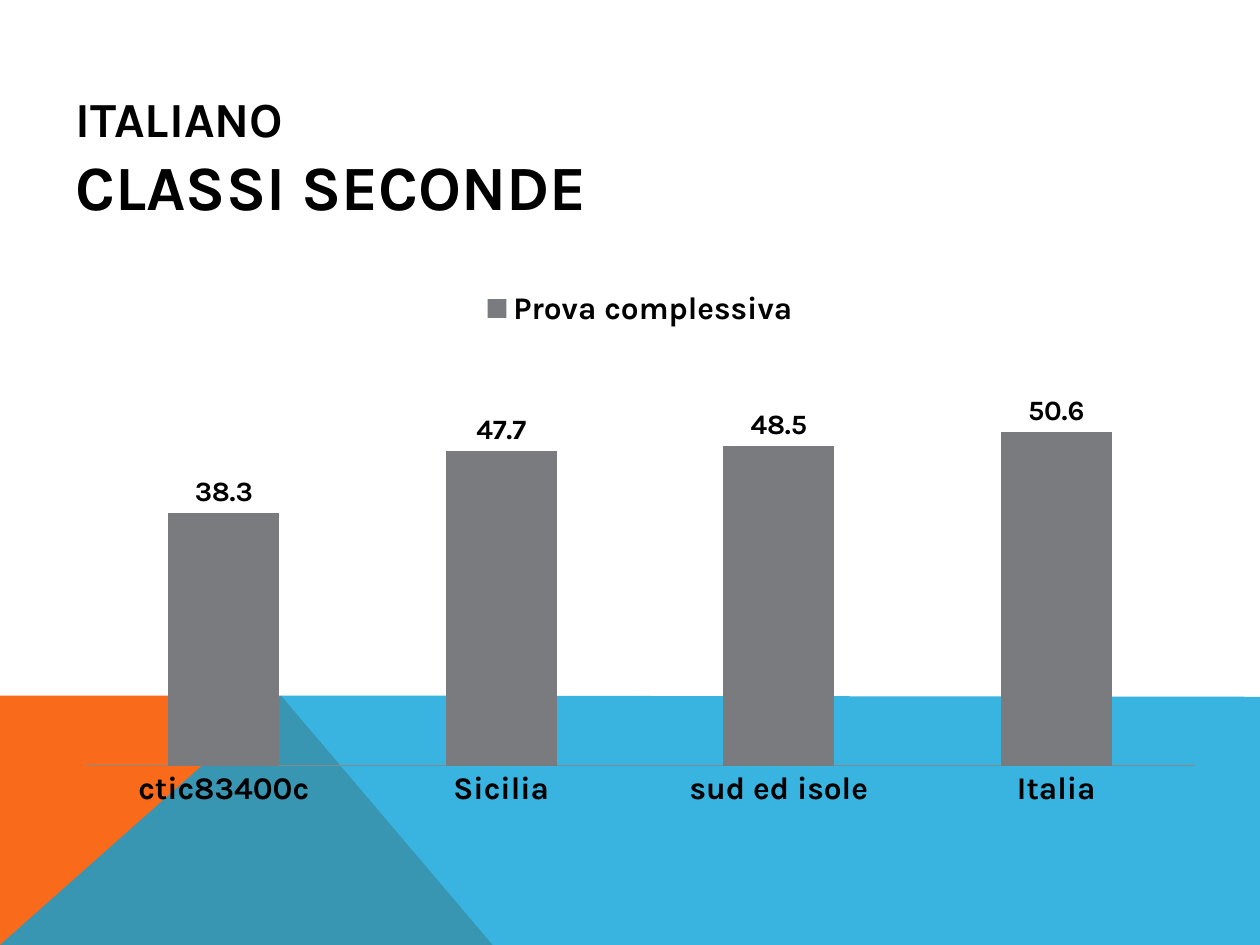
"""Build the slide with the Italian test results of the second classes."""
from lxml.etree import SubElement
from pptx import Presentation
from pptx.chart.data import CategoryChartData
from pptx.dml.color import RGBColor
from pptx.enum.chart import (XL_CHART_TYPE, XL_LABEL_POSITION,
                             XL_LEGEND_POSITION, XL_TICK_LABEL_POSITION, XL_TICK_MARK)
from pptx.enum.text import MSO_ANCHOR, PP_ALIGN
from pptx.oxml import parse_xml
from pptx.oxml.ns import nsdecls, qn
from pptx.util import Inches, Pt

COLORS = {"orange": "F96A1B", "blue": "08A1D9", "bar": "797B7E",
          "axis": "898989", "text": "000000"}
FONT = "Karla"


def rgb(name):
    return RGBColor.from_string(COLORS[name])


prs = Presentation()
prs.slide_width, prs.slide_height = Inches(10), Inches(7.5)
s = prs.slides.add_slide(prs.slide_layouts[5])

bands = [
    ("orange", 100, [(0, 7.5), (0, 5.52), (2.23, 5.52), (3.91, 7.5)]),
    ("blue", 80, [(0, 7.5), (2.23, 5.52), (10, 5.53), (10, 7.5)]),
]
for color, opacity, points in bands:
    corners = [(Inches(x), Inches(y)) for x, y in points]
    builder = s.shapes.build_freeform(*corners[0])
    builder.add_line_segments(corners[1:], close=True)
    sp = builder.convert_to_shape()
    sp.shadow.inherit = False
    sp.fill.solid()
    sp.fill.fore_color.rgb = rgb(color)
    sp.line.fill.background()
    if opacity < 100:
        clr = sp.fill._xPr.find(".//" + qn("a:srgbClr"))
        SubElement(clr, qn("a:alpha"), val=str(opacity * 1000))

title = s.shapes.title
title.left, title.top = Inches(0.5), Inches(0.37)
title.width, title.height = Inches(9), Inches(1.73)
tf = title.text_frame
tf.vertical_anchor = MSO_ANCHOR.MIDDLE
p = tf.paragraphs[0]
p.alignment = PP_ALIGN.LEFT
p.font.name, p.font.bold = FONT, True
p.font.color.rgb = rgb("text")
r = p.add_run()
r.text, r.font.size = "ITALIANO", Pt(28)
p.add_line_break()
r = p.add_run()
r.text, r.font.size = "CLASSI SECONDE", Pt(36)

data = CategoryChartData(number_format="General")
data.categories = ["ctic83400c", "Sicilia", "sud ed isole", "Italia"]
data.add_series("Prova complessiva", [38.3, 47.7, 48.5, 50.6])
chart = s.shapes.add_chart(XL_CHART_TYPE.COLUMN_CLUSTERED, Inches(0.67), Inches(2.18),
                           Inches(8.82), Inches(4.57), data).chart
chart.has_title = False
chart.font.name, chart.font.size = FONT, Pt(18)
chart.font.color.rgb = rgb("text")
chart.has_legend = True
chart.legend.position = XL_LEGEND_POSITION.TOP
chart.legend.include_in_layout = False
chart.legend.font.bold = True

cat_axis = chart.category_axis
cat_axis.major_tick_mark = XL_TICK_MARK.NONE
cat_axis.tick_labels.font.bold = True
cat_axis.format.line.color.rgb = rgb("axis")
cat_axis.format.line.width = Pt(0.75)
val_axis = chart.value_axis
val_axis.minimum_scale, val_axis.maximum_scale = 0, 60
val_axis.has_major_gridlines = False
val_axis.tick_label_position = XL_TICK_LABEL_POSITION.NONE
val_axis.visible = False

plot = chart.plots[0]
plot.gap_width, plot.overlap = 150, -25
plot.vary_by_categories = False
bars = plot.series[0]
bars.format.fill.solid()
bars.format.fill.fore_color.rgb = rgb("bar")
labels = bars.data_labels
labels.show_value = True
labels.position = XL_LABEL_POSITION.OUTSIDE_END
labels.font.name, labels.font.size, labels.font.bold = FONT, Pt(16), True
labels.font.color.rgb = rgb("text")

plot_area = chart._chartSpace.find(".//" + qn("c:plotArea"))
for old in plot_area.findall(qn("c:layout")):
    plot_area.remove(old)
plot_area.insert(0, parse_xml(
    f'<c:layout {nsdecls("c")}><c:manualLayout><c:layoutTarget val="inner"/>'
    '<c:xMode val="edge"/><c:yMode val="edge"/><c:x val="0"/><c:y val="0.165"/>'
    '<c:w val="1"/><c:h val="0.688"/></c:manualLayout></c:layout>'))

prs.save("out.pptx")
